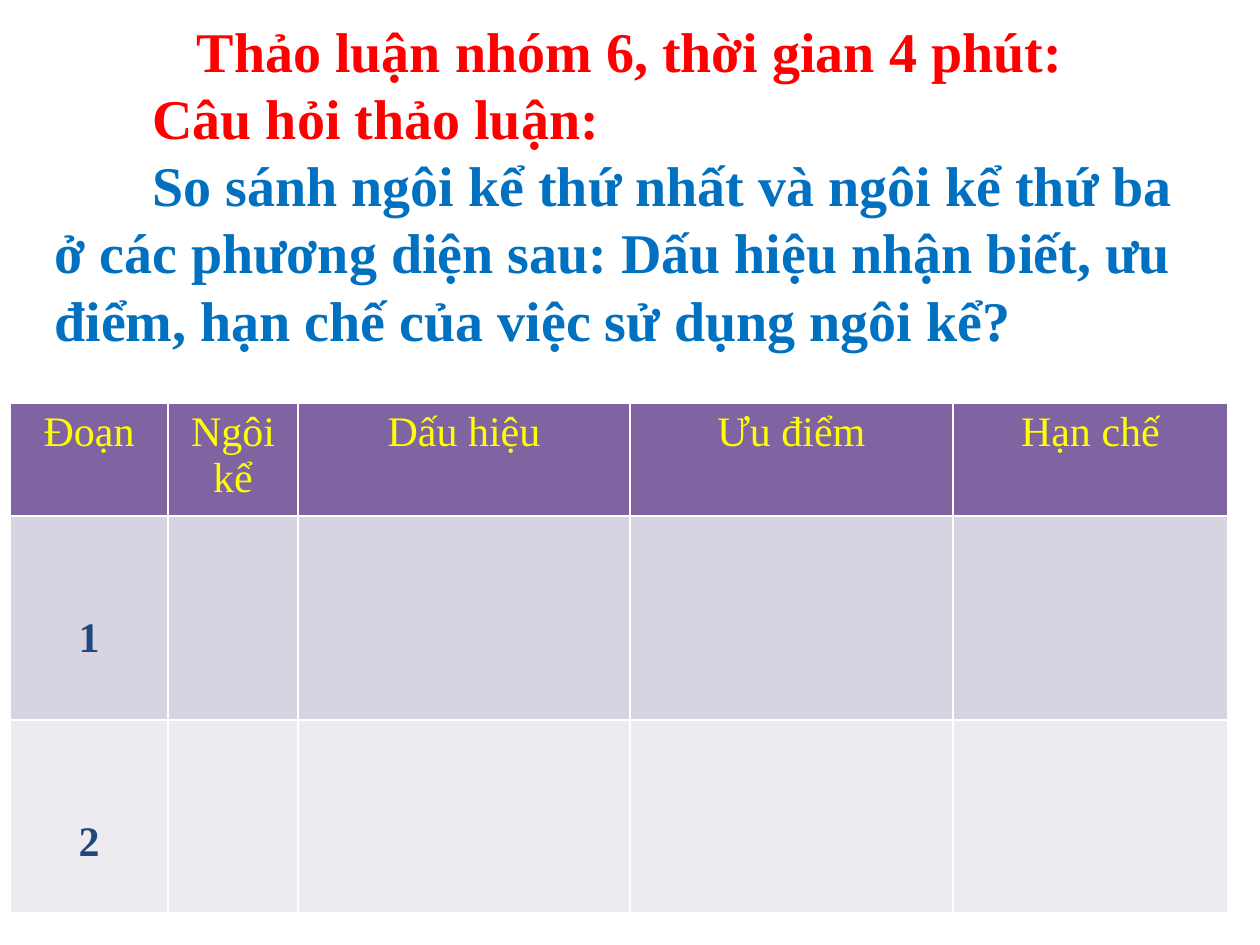
from lxml.etree import SubElement
from pptx import Presentation
from pptx.dml.color import RGBColor
from pptx.enum.text import MSO_AUTO_SIZE, PP_ALIGN
from pptx.oxml.ns import qn
from pptx.util import Pt

PX = 914400 // 126
COLORS = {
    "red": "FF0000", "blue": "0070C0", "yellow": "FFFF00", "navy": "1F497D",
    "purple": "8064A2", "lilac": "D8D3E0", "pale": "EDEAF0", "white": "FFFFFF",
}
INTRO = [
    ("Thảo luận nhóm 6, thời gian 4 phút:", "red", PP_ALIGN.CENTER, 0),
    ("Câu hỏi thảo luận:", "red", PP_ALIGN.LEFT, 98),
    ("So sánh ngôi kể thứ nhất và ngôi kể thứ ba ở các phương diện sau: "
     "Dấu hiệu nhận biết, ưu điểm, hạn chế của việc sử dụng ngôi kể?",
     "blue", PP_ALIGN.LEFT, 98),
]
COLUMN_WIDTHS = [158, 130, 332, 323, 275]
# height, fill, text colour, bold, top margin, texts
ROWS = [
    (113, "purple", "yellow", False, 6,
     ["Đoạn", "Ngôi kể", "Dấu hiệu", "Ưu điểm", "Hạn chế"]),
    (204, "lilac", "navy", True, 99, ["1"]),
    (193, "pale", "navy", True, 99, ["2"]),
]


class SlideBuilder:
    font_name = "Times New Roman"

    def __init__(self, slide):
        self.slide = slide

    def add_span(self, para, text, color, align, **font_format):
        para.alignment = align
        span = para.add_run()
        span.text = text
        span.font.name = self.font_name
        span.font.color.rgb = RGBColor.from_string(COLORS[color])
        for name, value in font_format.items():
            setattr(span.font, name, value)

    def text_box(self, left, top, width, height, lines):
        box = self.slide.shapes.add_textbox(
            *(n * PX for n in (left, top, width, height)))
        frame = box.text_frame
        frame.word_wrap = True
        frame.auto_size = MSO_AUTO_SIZE.NONE
        for index, (text, color, align, indent) in enumerate(lines):
            para = frame.add_paragraph() if index else frame.paragraphs[0]
            self.add_span(para, text, color, align, size=Pt(32), bold=True)
            if indent:
                para._p.get_or_add_pPr().set("indent", str(indent * PX))

    def style_cell(self, cell, fill):
        """Draw thin white borders and fill the cell."""
        properties = cell._tc.get_or_add_tcPr()
        for side in ("lnL", "lnR", "lnT", "lnB"):
            line = SubElement(properties, qn(f"a:{side}"), w=str(Pt(1)))
            solid = SubElement(line, qn("a:solidFill"))
            SubElement(solid, qn("a:srgbClr"), val=COLORS["white"])
        cell.fill.solid()
        cell.fill.fore_color.rgb = RGBColor.from_string(COLORS[fill])

    def table(self, left, top, widths, rows):
        height = sum(row[0] for row in rows)
        table = self.slide.shapes.add_table(
            len(rows), len(widths), left * PX, top * PX,
            sum(widths) * PX, height * PX).table
        for column, width in zip(table.columns, widths):
            column.width = width * PX
        for row, (height, fill, color, bold, margin, texts) in zip(table.rows, rows):
            row.height = height * PX
            for cell in row.cells:
                self.style_cell(cell, fill)
            for cell, text in zip(row.cells, texts):
                cell.margin_top = margin * PX
                self.add_span(cell.text_frame.paragraphs[0], text, color,
                              PP_ALIGN.CENTER, size=Pt(24), bold=bold)


def main():
    deck = Presentation()
    deck.slide_width, deck.slide_height = 1260 * PX, 945 * PX
    page = SlideBuilder(deck.slides.add_slide(deck.slide_layouts[6]))
    page.text_box(42, 10, 1176, 420, INTRO)
    page.table(10, 403, COLUMN_WIDTHS, ROWS)
    deck.save("out.pptx")


if __name__ == "__main__":
    main()
